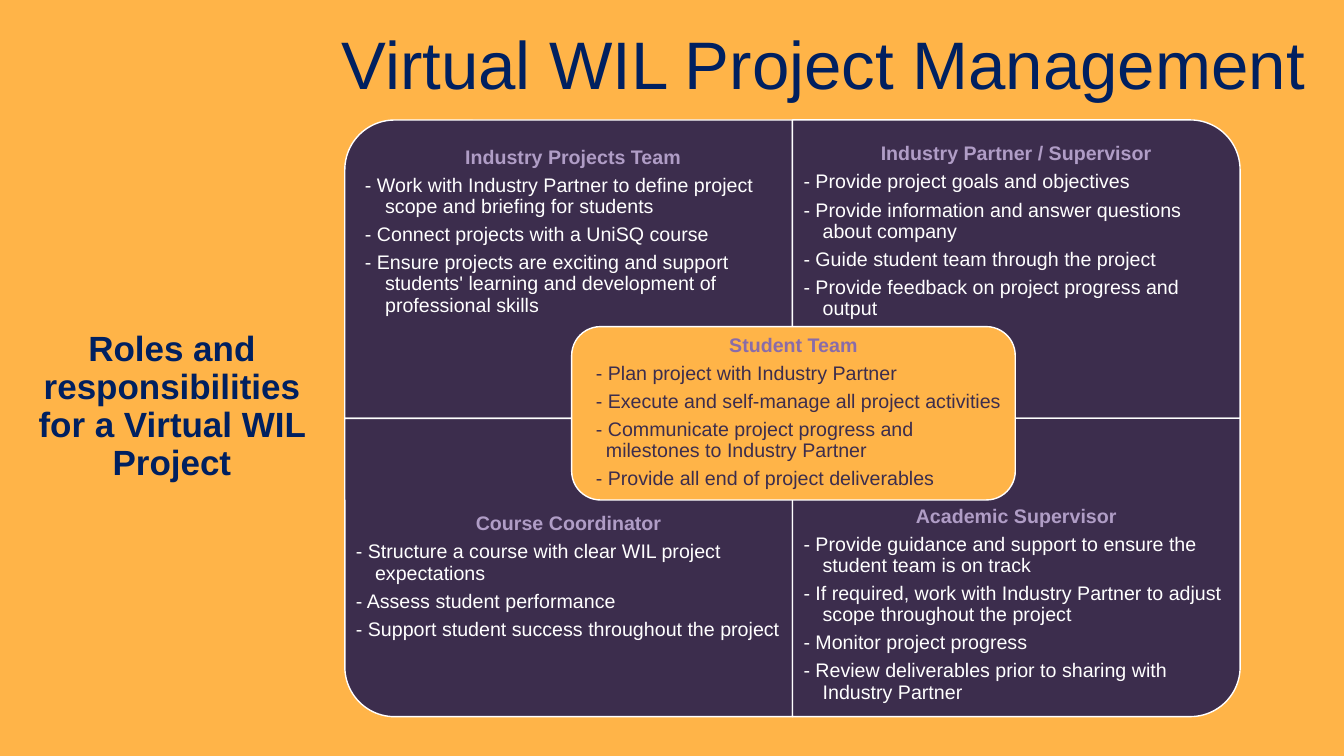
from pptx import Presentation
from pptx import util as u
from pptx.dml.color import RGBColor
from pptx.enum import shapes, text

ORANGE, PURPLE, NAVY, WHITE = "FFB448", "3C2D4D", "002060", "FFFFFF"
LILAC, VIOLET = "B09DC6", "896CA9"

# Matrix of four roles around the student team
LEFT, TOP, WIDTH, HEIGHT = 3.42, 1.19, 4.44, 2.96
TEXT_HEIGHT = 2.22

# heading, duties, column, row, rotation, text options
ROLES = [
    ("Industry Projects Team",
     ["Work with Industry Partner to define project scope and briefing for students",
      "Connect projects with a UniSQ course",
      "Ensure projects are exciting and support students' learning and "
      "development of professional skills"],
     0, 0, 270, dict(margin=0.29, hang=0.2, heading_indented=True)),
    ("Industry Partner / Supervisor",
     ["Provide project goals and objectives",
      "Provide information and answer questions about company",
      "Guide student team through the project",
      "Provide feedback on project progress and output"],
     1, 0, 0, {}),
    ("Course Coordinator",
     ["Structure a course with clear WIL project expectations",
      "Assess student performance",
      "Support student success throughout the project"],
     0, 1, 180, dict(bottom_inset=0.66)),
    ("Academic Supervisor",
     ["Provide guidance and support to ensure the student team is on track",
      "If required, work with Industry Partner to adjust scope throughout the project",
      "Monitor project progress",
      "Review deliverables prior to sharing with Industry Partner"],
     1, 1, 90, {}),
]
STUDENT_DUTIES = [
    "Plan project with Industry Partner",
    "Execute and self-manage all project activities",
    "Communicate project progress and milestones to Industry Partner",
    "Provide all end of project deliverables",
]


def rgb(value):
    return RGBColor.from_string(value)


def add_panel(slide, kind, left, top, width, height, fill, rotation=0):
    panel = slide.shapes.add_shape(kind, u.Inches(left), u.Inches(top),
                                   u.Inches(width), u.Inches(height))
    panel.shadow.inherit = False
    panel.rotation = rotation
    panel.fill.solid()
    panel.fill.fore_color.rgb = rgb(fill)
    panel.line.color.rgb = rgb(WHITE)
    panel.line.width = u.Pt(1)


def add_frame(slide, left, top, width, height, inset=0, bottom_inset=None,
              anchor=text.MSO_ANCHOR.MIDDLE):
    frame = slide.shapes.add_textbox(u.Inches(left), u.Inches(top),
                                     u.Inches(width), u.Inches(height)).text_frame
    frame.word_wrap = True
    frame.vertical_anchor = anchor
    frame.margin_left = frame.margin_right = frame.margin_top = u.Inches(inset)
    frame.margin_bottom = u.Inches(inset if bottom_inset is None else bottom_inset)
    return frame


def write(frame, wording, size=14, color=WHITE, bold=False, centred=False,
          margin=0, hang=0, after=0):
    first = frame.paragraphs[0]
    paragraph = first if not first.runs else frame.add_paragraph()
    properties = paragraph._p.get_or_add_pPr()
    properties.set("marL", str(u.Inches(margin)))
    properties.set("indent", str(-u.Inches(hang)))
    paragraph.alignment = text.PP_ALIGN.CENTER if centred else text.PP_ALIGN.LEFT
    paragraph.line_spacing = 0.9
    paragraph.space_after = u.Pt(after)
    run = paragraph.add_run()
    run.text = wording
    run.font.name = "Arial"
    run.font.size = u.Pt(size)
    run.font.bold = bold
    run.font.color.rgb = rgb(color)


def write_role(frame, heading, duties, heading_color=LILAC, color=WHITE,
               margin=0.19, hang=0.19, heading_indented=False):
    indent = dict(margin=margin, hang=hang)
    write(frame, heading, color=heading_color, bold=True, centred=True, after=4.9,
          **(indent if heading_indented else {}))
    for duty in duties:
        write(frame, f"- {duty}", color=color, after=4.9, **indent)


def add_quadrant(slide, heading, duties, column, row, rotation,
                 bottom_inset=0.11, **options):
    left, top = LEFT + column * WIDTH, TOP + row * HEIGHT
    # A quarter turn swaps the sides about the same centre
    swap = (WIDTH - HEIGHT) / 2 if rotation % 180 else 0
    add_panel(slide, shapes.MSO_SHAPE.ROUND_1_RECTANGLE, left + swap, top - swap,
              WIDTH - 2 * swap, HEIGHT + 2 * swap, PURPLE, rotation)
    text_top = top + row * (HEIGHT - TEXT_HEIGHT)
    frame = add_frame(slide, left, text_top, WIDTH, TEXT_HEIGHT, 0.11, bottom_inset)
    write_role(frame, heading, duties, **options)


def main():
    deck = Presentation()
    deck.slide_width, deck.slide_height = u.Inches(13.33), u.Inches(7.5)
    slide = deck.slides.add_slide(deck.slide_layouts[6])
    slide.background.fill.solid()
    slide.background.fill.fore_color.rgb = rgb(ORANGE)

    # Four outer roles
    for heading, duties, column, row, rotation, options in ROLES:
        add_quadrant(slide, heading, duties, column, row, rotation, **options)

    # Student team in the centre; a narrow inset keeps each short duty on one line
    add_panel(slide, shapes.MSO_SHAPE.ROUNDED_RECTANGLE, 5.67, 3.24, 4.4, 1.72, ORANGE)
    student_team = add_frame(slide, 5.75, 3.32, 4.24, 1.55, 0.02)
    write_role(student_team, "Student Team", STUDENT_DUTIES, VIOLET, PURPLE,
               margin=0.24, hang=0.1)

    # Title and side caption
    title = add_frame(slide, 3.21, 0.22, 9.92, 0.81, anchor=text.MSO_ANCHOR.BOTTOM)
    write(title, "Virtual WIL Project Management", size=48, color=NAVY, centred=True)
    caption = add_frame(slide, 0.37, 3.29, 2.67, 1.73, anchor=text.MSO_ANCHOR.TOP)
    write(caption, "Roles and responsibilities for a Virtual WIL Project",
          size=25, color=NAVY, bold=True, centred=True)

    deck.save("out.pptx")


if __name__ == "__main__":
    main()
